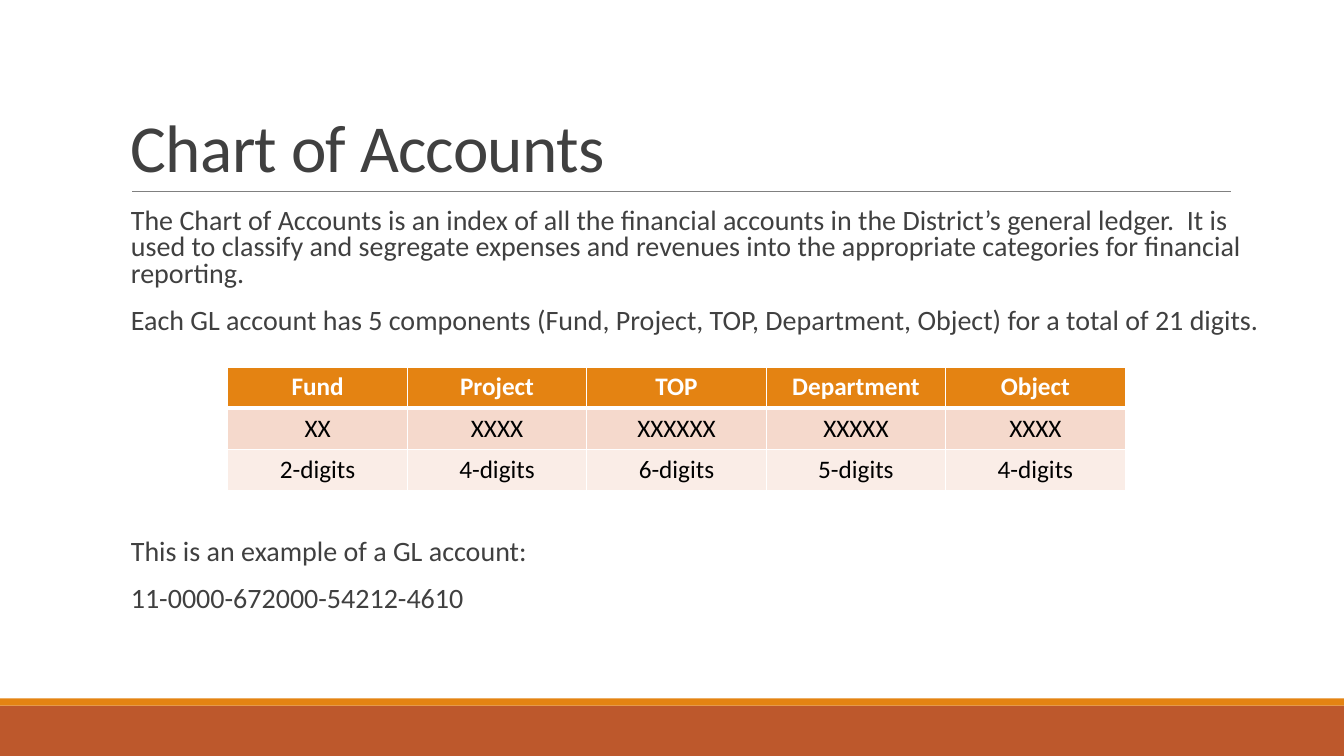
from lxml.etree import SubElement
from pptx import Presentation
from pptx.dml.color import RGBColor
from pptx.enum.shapes import MSO_CONNECTOR, MSO_SHAPE
from pptx.enum.text import MSO_ANCHOR, PP_ALIGN
from pptx.oxml import parse_xml
from pptx.oxml.ns import nsdecls, qn
from pptx.util import Inches, Pt

WHITE = RGBColor(0xFF, 0xFF, 0xFF)
BLACK = RGBColor(0, 0, 0)
DARK = RGBColor(0x40, 0x40, 0x40)
GRAY = RGBColor(0x80, 0x80, 0x80)
ORANGE = RGBColor(0xE4, 0x83, 0x12)
RUST = RGBColor(0xBD, 0x58, 0x2C)
PEACH = RGBColor(0xF5, 0xD9, 0xCC)
BLUSH = RGBColor(0xFA, 0xED, 0xE7)

TITLE = "Chart of Accounts"
BODY = [
    ("The Chart of Accounts is an index of all the financial accounts in the "
     "District’s general ledger.  It is used to classify and segregate expenses "
     "and revenues into the appropriate categories for financial reporting.", 12),
    ("Each GL account has 5 components (Fund, Project, TOP, Department, Object) "
     "for a total of 21 digits.", 12),
    ("This is an example of a GL account:", 144),
    ("11-0000-672000-54212-4610", 12),
]
ACCOUNT_PARTS = [
    ["Fund", "Project", "TOP", "Department", "Object"],
    ["XX", "XXXX", "XXXXXX", "XXXXX", "XXXX"],
    ["2-digits", "4-digits", "6-digits", "5-digits", "4-digits"],
]
ROW_FILLS = [ORANGE, PEACH, BLUSH]
BANDS = [(7, 0.5, RUST), (6.93, 0.07, ORANGE)]
COL_W, ROW_H = 1.78, 0.41


def write(p, text, size=20, color=DARK, bold=False, align=PP_ALIGN.LEFT,
          spacing=1.0, before=0, after=0, tracking=None):
    p.alignment = align
    p.line_spacing = spacing
    p.space_before, p.space_after = Pt(before), Pt(after)
    r = p.add_run()
    r.text = text
    r.font.name, r.font.size, r.font.bold = "Calibri", Pt(size), bold
    r.font.color.rgb = color
    if tracking is not None:
        r.font._element.set("spc", str(tracking))


def add_text_box(s, left, top, width, height, anchor):
    tf = s.shapes.add_textbox(Inches(left), Inches(top),
                              Inches(width), Inches(height)).text_frame
    tf.word_wrap = True
    tf.vertical_anchor = anchor
    return tf


def set_borders(cell, bottom):
    tcPr = cell._tc.get_or_add_tcPr()
    for i, (side, width) in enumerate([("L", 1), ("R", 1), ("T", 1), ("B", bottom)]):
        tcPr.insert(i, parse_xml(
            f'<a:ln{side} {nsdecls("a")} w="{Pt(width)}"><a:solidFill>'
            f'<a:srgbClr val="{WHITE}"/></a:solidFill></a:ln{side}>'))


def main():
    prs = Presentation()
    prs.slide_width, prs.slide_height = Inches(13.33), Inches(7.5)
    s = prs.slides.add_slide(prs.slide_layouts[6])

    for top, height, color in BANDS:
        sp = s.shapes.add_shape(MSO_SHAPE.RECTANGLE, 0, Inches(top),
                                prs.slide_width, Inches(height))
        sp.shadow.inherit = False
        sp.fill.solid()
        sp.fill.fore_color.rgb = color
        sp.line.fill.background()

    rule = s.shapes.add_connector(MSO_CONNECTOR.STRAIGHT, Inches(1.31), Inches(1.9),
                                  Inches(12.21), Inches(1.9))
    rule.line.color.rgb = GRAY
    rule.line.width = Pt(0.5)
    SubElement(rule._element.spPr, qn("a:effectLst"))

    tf = add_text_box(s, 1.2, 0.31, 11, 1.59, MSO_ANCHOR.BOTTOM)
    write(tf.paragraphs[0], TITLE, size=48, spacing=0.85, tracking=-50)

    tf = add_text_box(s, 1.2, 2.02, 11.44, 4.4, MSO_ANCHOR.TOP)
    tf.margin_right = 0
    for i, (text, before) in enumerate(BODY):
        p = tf.add_paragraph() if i else tf.paragraphs[0]
        write(p, text, spacing=0.8, before=before, after=2)

    rows, cols = len(ACCOUNT_PARTS), len(ACCOUNT_PARTS[0])
    table = s.shapes.add_table(rows, cols, Inches(2.26), Inches(3.64),
                               Inches(COL_W * cols), Inches(ROW_H * rows)).table
    for col in table.columns:
        col.width = Inches(COL_W)
    for i, (texts, fill) in enumerate(zip(ACCOUNT_PARTS, ROW_FILLS)):
        table.rows[i].height = Inches(ROW_H)
        header = i == 0
        for j, text in enumerate(texts):
            cell = table.cell(i, j)
            cell.fill.solid()
            cell.fill.fore_color.rgb = fill
            set_borders(cell, 3 if header else 1)
            write(cell.text_frame.paragraphs[0], text, size=18, bold=header,
                  color=WHITE if header else BLACK, align=PP_ALIGN.CENTER)

    prs.save("out.pptx")


if __name__ == "__main__":
    main()
